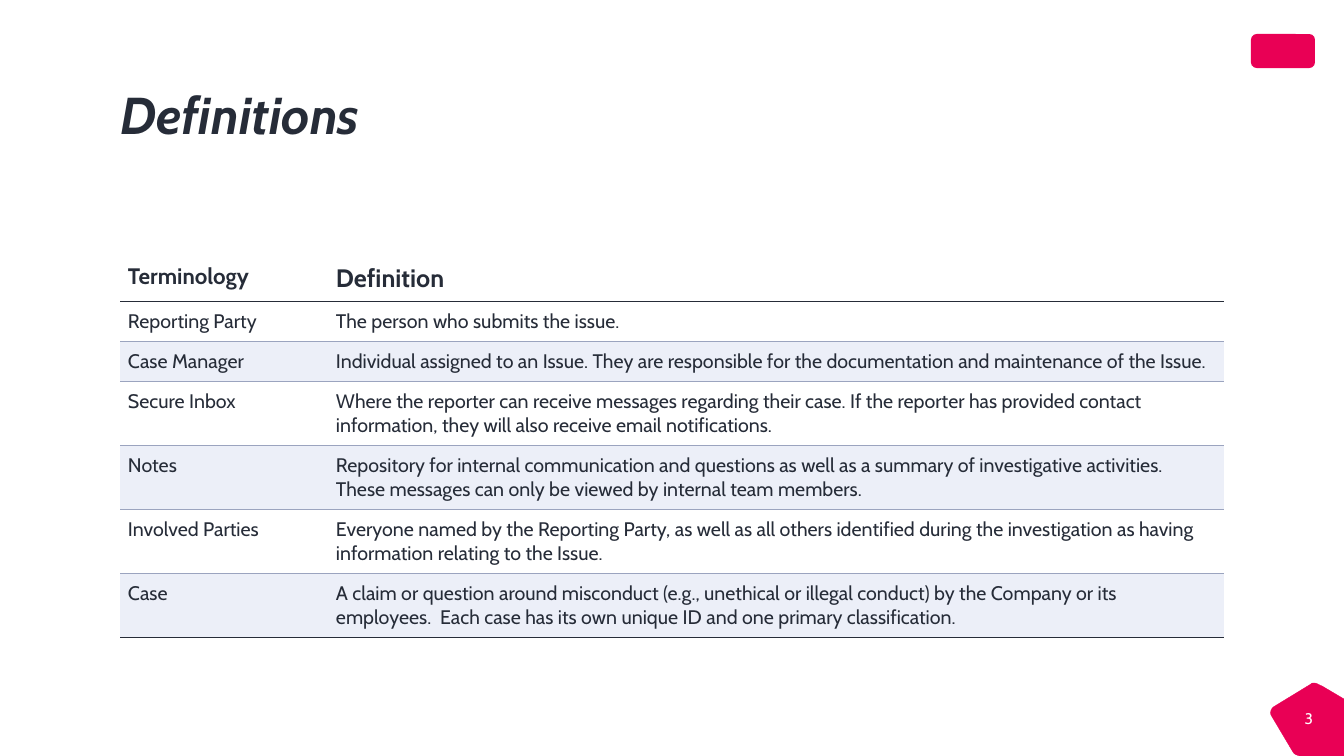
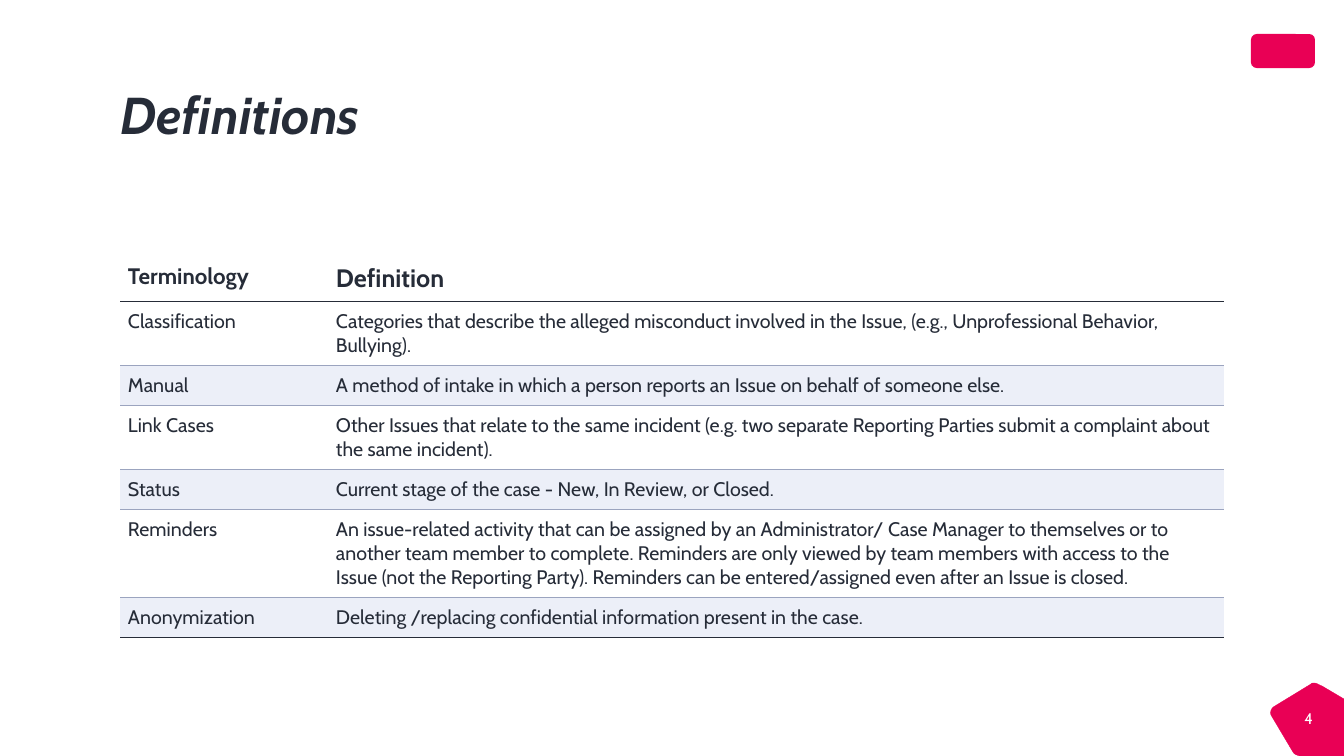
from dataclasses import dataclass

from lxml import etree
from pptx import Presentation, util as u
from pptx.dml.color import RGBColor
from pptx.enum import shapes, text
from pptx.oxml.ns import qn

EMU_PER_PX = 914400 / 100.8


@dataclass(frozen=True)
class Theme:
    font: str = "Cabin"
    ink: str = "262C38"
    accent: str = "E90055"
    band: str = "ECEFF8"
    rule: str = "9BA4BF"
    white: str = "FFFFFF"
    title_size: int = 37
    body_size: int = 14
    number_size: int = 11
    heavy_line: float = 1
    light_line: float = 0.5
    hairline: float = 0.25


THEME = Theme()
TITLE = "Definitions"
FIRST_NUMBER = 3
HEADERS = [("Terminology", 16), ("Definition", 18)]

# Each row: term, definition, number of lines the definition takes
SLIDES = [
    [
        ("Reporting Party", "The person who submits the issue.", 1),
        ("Case Manager", "Individual assigned to an Issue. They are responsible for the "
         "documentation and maintenance of the Issue.", 1),
        ("Secure Inbox", "Where the reporter can receive messages regarding their case. If the "
         "reporter has provided contact information, they will also receive email "
         "notifications.", 2),
        ("Notes", "Repository for internal communication and questions as well as a summary of "
         "investigative activities. These messages can only be viewed by internal team "
         "members.", 2),
        ("Involved Parties", "Everyone named by the Reporting Party, as well as all others "
         "identified during the investigation as having information relating to the Issue.", 2),
        ("Case", "A claim or question around misconduct (e.g., unethical or illegal conduct) by "
         "the Company or its employees.  Each case has its own unique ID and one primary "
         "classification.", 2),
    ],
    [
        ("Classification", "Categories that describe the alleged misconduct involved in the "
         "Issue, (e.g., Unprofessional Behavior, Bullying).", 2),
        ("Manual", "A method of intake in which a person reports an Issue on behalf of someone "
         "else.", 1),
        ("Link Cases", "Other Issues that relate to the same incident (e.g. two separate "
         "Reporting Parties submit a complaint about the same incident).", 2),
        ("Status", "Current stage of the case - New, In Review, or Closed.", 1),
        ("Reminders", "An issue-related activity that can be assigned by an Administrator/ Case "
         "Manager to themselves or to another team member to complete. Reminders are only "
         "viewed by team members with access to the Issue (not the Reporting Party). Reminders "
         "can be entered/assigned even after an Issue is closed.", 3),
        ("Anonymization", "Deleting /replacing confidential information present in the case.", 1),
    ],
]

# Places in px
SLIDE_SIZE = (1344, 756)
TITLE_BOX = (120, 87, 1103, 66)
LOGO_BOX = (1251, 34, 64, 34)
TABLE_AT = (120, 255)
COLUMNS = (208, 896)
HEADER_HEIGHT, LINE_HEIGHT, CELL_INSET = 46, 24, 8
NUMBER_RIGHT, NUMBER_BOTTOM = 31, 28

# One point is a straight edge; three points are a cubic curve
BADGE_START = (1314, 683)
BADGE_EDGES = [
    [(1317, 683), (1319, 685), (1322, 686)],
    [(1344, 699)],
    [(1344, 756)],
    [(1300, 756)],
    [(1297, 755), (1295, 755), (1293, 752)],
    [(1271, 715)],
    [(1270, 712), (1271, 708), (1275, 706)],
    [(1311, 684)],
    [(1312, 683), (1313, 683), (1314, 683)],
]
CURVE_STEPS = 8


def px(length):
    return u.Emu(round(length * EMU_PER_PX))


def rgb(color):
    return RGBColor.from_string(color)


def write(para, words, size, color=THEME.ink, bold=False, italic=False):
    span = para.add_run()
    span.text = words
    font = span.font
    font.name, font.size, font.bold, font.italic = THEME.font, u.Pt(size), bold, italic
    font.color.rgb = rgb(color)


def set_insets(frame, left=0, top=0, right=0, bottom=0):
    frame.margin_left, frame.margin_top = px(left), px(top)
    frame.margin_right, frame.margin_bottom = px(right), px(bottom)


def paint(shape, line_width=None):
    """Give a shape the accent fill, with an outline only if a width is given."""
    shape.shadow.inherit = False
    shape.fill.solid()
    shape.fill.fore_color.rgb = rgb(THEME.accent)
    if line_width is None:
        shape.line.fill.background()
    else:
        shape.line.color.rgb = rgb(THEME.accent)
        shape.line.width = u.Pt(line_width)


def outline_points(start, edges):
    """Yield the corners of an outline, with its curves cut into short lines."""
    for edge in edges:
        if len(edge) == 1:
            yield edge[0]
        else:
            controls = [start, *edge]
            for step in range(1, CURVE_STEPS + 1):
                t = step / CURVE_STEPS
                weights = ((1 - t) ** 3, 3 * t * (1 - t) ** 2, 3 * t * t * (1 - t), t ** 3)
                yield tuple(sum(w * point[axis] for w, point in zip(weights, controls))
                            for axis in (0, 1))
        start = edge[-1]


def add_title(page):
    title = page.shapes.title
    title.left, title.top, title.width, title.height = map(px, TITLE_BOX)
    frame = title.text_frame
    set_insets(frame)
    frame.word_wrap = True
    frame.auto_size = text.MSO_AUTO_SIZE.NONE
    frame.vertical_anchor = text.MSO_ANCHOR.TOP
    para = frame.paragraphs[0]
    para.alignment = text.PP_ALIGN.LEFT
    para.line_spacing = 0.95
    write(para, TITLE, THEME.title_size, bold=True, italic=True)


def add_logo_block(page):
    paint(page.shapes.add_shape(shapes.MSO_SHAPE.ROUNDED_RECTANGLE, *map(px, LOGO_BOX)))


def add_number_badge(page, number):
    builder = page.shapes.build_freeform(*map(px, BADGE_START), scale=1.0)
    points = outline_points(BADGE_START, BADGE_EDGES)
    builder.add_line_segments([(px(x), px(y)) for x, y in points], close=True)
    badge = builder.convert_to_shape()
    paint(badge, THEME.hairline)
    frame = badge.text_frame
    set_insets(frame, right=NUMBER_RIGHT, bottom=NUMBER_BOTTOM)
    frame.vertical_anchor = text.MSO_ANCHOR.BOTTOM
    para = frame.paragraphs[0]
    para.alignment = text.PP_ALIGN.RIGHT
    write(para, str(number), THEME.number_size, THEME.white)


def set_borders(cell, top, bottom):
    """Draw the top and bottom edges from (color, width) pairs; None leaves an edge bare."""
    properties = cell._tc.get_or_add_tcPr()
    for tag, edge in (("a:lnL", None), ("a:lnR", None), ("a:lnT", top), ("a:lnB", bottom)):
        line = etree.SubElement(properties, qn(tag))
        if edge is None:
            etree.SubElement(line, qn("a:noFill"))
            continue
        color, width = edge
        line.set("w", str(u.Pt(width)))
        fill = etree.SubElement(line, qn("a:solidFill"))
        etree.SubElement(fill, qn("a:srgbClr"), val=color)


def add_definitions(page, entries):
    heights = [HEADER_HEIGHT] + [2 * CELL_INSET + LINE_HEIGHT * lines for *_, lines in entries]
    rows = [HEADERS] + [[(words, THEME.body_size) for words in (term, definition)]
                        for term, definition, _ in entries]
    frame = page.shapes.add_table(len(rows), len(COLUMNS), *map(px, TABLE_AT),
                                  px(sum(COLUMNS)), px(sum(heights)))
    table = frame.table
    table.first_row = table.horz_banding = False
    for column, width in zip(table.columns, COLUMNS):
        column.width = px(width)

    heavy = (THEME.ink, THEME.heavy_line)
    light = (THEME.rule, THEME.light_line)
    last = len(rows) - 1
    edges = [None, heavy] + [light] * (last - 1) + [heavy]
    for r, (row, height) in enumerate(zip(rows, heights)):
        table.rows[r].height = px(height)
        for c, (words, size) in enumerate(row):
            cell = table.cell(r, c)
            set_insets(cell, *[CELL_INSET] * 4)
            set_borders(cell, edges[r], edges[r + 1])
            if r and r % 2 == 0:
                cell.fill.solid()
                cell.fill.fore_color.rgb = rgb(THEME.band)
            else:
                cell.fill.background()
            write(cell.text_frame.paragraphs[0], words, size, bold=r == 0)


def main():
    deck = Presentation()
    deck.slide_width, deck.slide_height = map(px, SLIDE_SIZE)
    title_only = deck.slide_layouts[5]
    for number, entries in enumerate(SLIDES, FIRST_NUMBER):
        page = deck.slides.add_slide(title_only)
        add_logo_block(page)
        add_title(page)
        add_number_badge(page, number)
        add_definitions(page, entries)
    deck.save("out.pptx")


if __name__ == "__main__":
    main()
